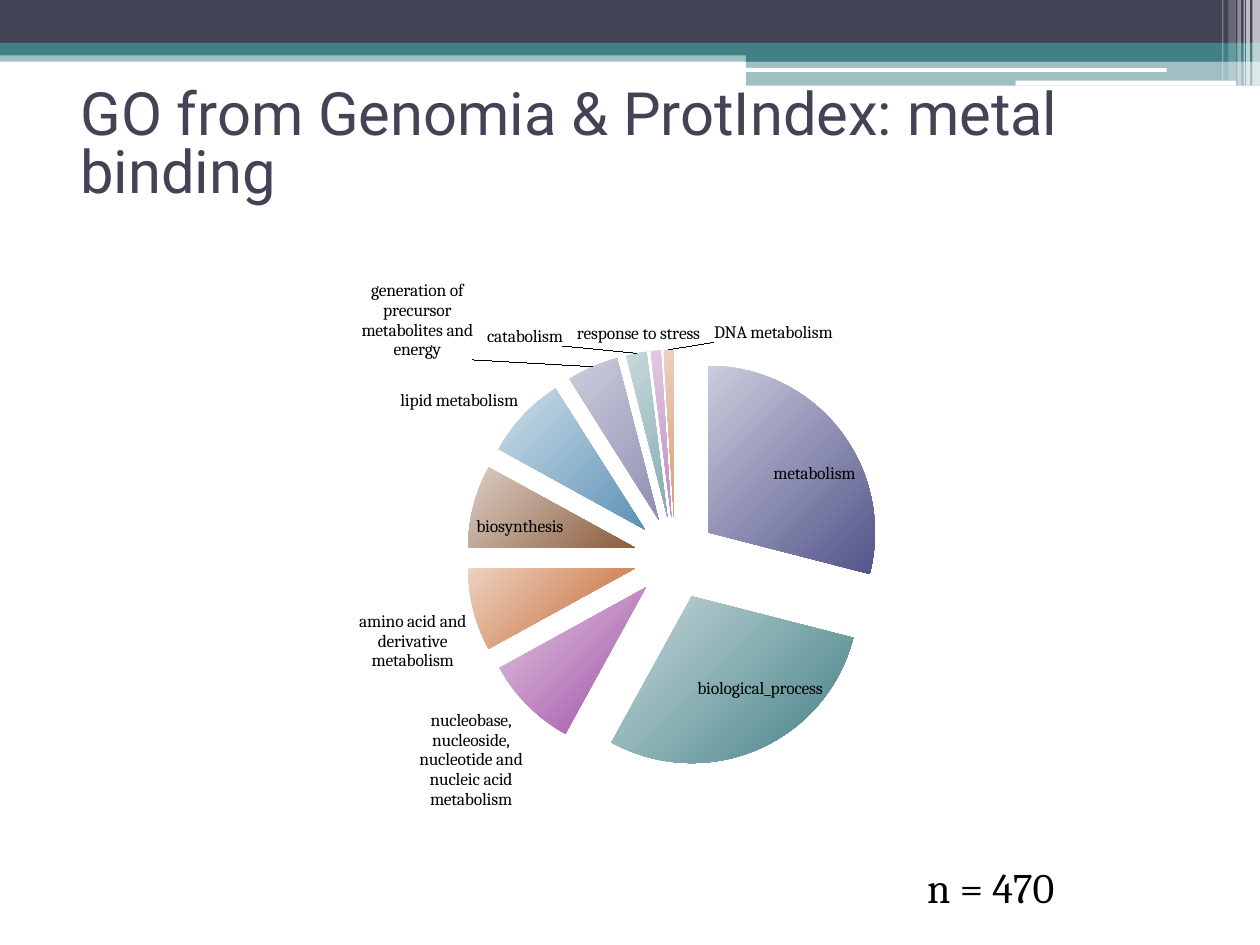
from lxml.etree import SubElement
from pptx import Presentation
from pptx.chart.data import CategoryChartData
from pptx.dml.color import RGBColor
from pptx.enum.chart import XL_CHART_TYPE as ChartType, XL_LABEL_POSITION as LabelPosition
from pptx.enum.shapes import MSO_SHAPE as Shape
from pptx.enum.text import MSO_ANCHOR as Anchor, MSO_AUTO_SIZE as AutoSize
from pptx.oxml import parse_xml
from pptx.oxml.ns import nsdecls, qn
from pptx.util import Inches, Pt

WIDTH, HEIGHT = Inches(10), Inches(7.5)
COLUMNS, ROWS = 1000, 750
SLATE, TEAL, WHITE, BLACK = "424456", "438086", "FFFFFF", "000000"
SLICE_COLOURS = ["53548A", "438086", "A04DA3", "C4652D", "8B5D3D", "5C92B5"]
BANDS = [
    (0, 40, 1000, 9, TEAL, 50),
    (0, 0, 1000, 34, SLATE, 100),
    (0, 34, 1000, 10, TEAL, 100),
    (592, 39, 408, 10, TEAL, 100),
    (592, 48, 408, 20, TEAL, 50),
]
SLOTS = [(591, 54, 335, 3), (806, 64, 175, 4)]
STRIPES = [
    (994, 6, 68, 65),
    (989, 3, 68, 65),
    (987, 1, 68, 60),
    (982, 3, 68, 40),
    (975, 6, 64, 20),
    (970, 1, 64, 30),
]
SLICES = {
    "metabolism": 29,
    "biological_process": 29,
    "nucleobase, nucleoside, nucleotide and nucleic acid metabolism": 9,
    "amino acid and derivative metabolism": 8,
    "biosynthesis": 8,
    "lipid metabolism": 8,
    "generation of precursor metabolites and energy": 5,
    "catabolism": 2,
    "response to stress": 1,
    "DNA metabolism": 1,
}


def colour(code):
    return RGBColor.from_string(code)


def lighten(code, share):
    channels = [int(code[i:i + 2], 16) for i in (0, 2, 4)]
    return "".join(f"{round(c + (255 - c) * share):02X}" for c in channels)


def place(column, row, columns, rows):
    return (WIDTH * column // COLUMNS, HEIGHT * row // ROWS,
            WIDTH * columns // COLUMNS, HEIGHT * rows // ROWS)


def add_band(page, area, code, opacity=100, kind=Shape.RECTANGLE):
    band = page.shapes.add_shape(kind, *place(*area))
    band.shadow.inherit = False
    band.line.fill.background()
    band.fill.solid()
    band.fill.fore_color.rgb = colour(code)
    if opacity < 100:
        tint = band.fill._xPr.find(qn("a:solidFill"))[0]
        SubElement(tint, qn("a:alpha"), val=str(opacity * 1000))


def add_text(page, area, text, font, size, code, wrap=True):
    box = page.shapes.add_textbox(*place(*area))
    frame = box.text_frame
    frame.word_wrap = wrap
    frame.text = text
    para = frame.paragraphs[0]
    span = para.runs[0]
    span.font.name, span.font.size = font, Pt(size)
    span.font.color.rgb = colour(code)
    return frame


def shade_slice(point, index):
    cycle, hue = divmod(index, len(SLICE_COLOURS))
    base = SLICE_COLOURS[hue]
    fill = point.format.fill
    fill.gradient()
    fill.gradient_angle = 315
    for stop, share in zip(fill.gradient_stops, (0.7, 0.35 * cycle)):
        stop.color.rgb = colour(lighten(base, share))
    point.format.line.fill.background()


def add_pie(page, area):
    data = CategoryChartData()
    data.categories = list(SLICES)
    data.add_series("Series 1", list(SLICES.values()))
    chart = page.shapes.add_chart(ChartType.PIE, *place(*area), data).chart
    chart.has_title = chart.has_legend = False
    chart.font.name, chart.font.size = "Cambria", Pt(10)
    chart.font.color.rgb = colour(BLACK)

    plot = chart.plots[0]
    plot.vary_by_categories = True
    plot.has_data_labels = True
    labels = plot.data_labels
    labels.show_category_name = True
    labels.show_value = labels.show_percentage = False
    labels.number_format, labels.number_format_is_linked = "0.00%", False
    labels.position = LabelPosition.BEST_FIT

    series = plot.series[0]
    for index in range(len(SLICES)):
        shade_slice(series.points[index], index)
    explosion = parse_xml(f'<c:explosion {nsdecls("c")} val="25"/>')
    series._element.find(qn("c:tx")).addnext(explosion)
    set_plot_area(chart, x=0.27, y=0.15, w=0.59, h=0.7)


def set_plot_area(chart, **shares):
    plot_area = chart._chartSpace.chart.plotArea
    for old in plot_area.findall(qn("c:layout")):
        plot_area.remove(old)
    sides = "".join(f'<c:{side} val="{share}"/>' for side, share in shares.items())
    plot_area.insert(0, parse_xml(
        f'<c:layout {nsdecls("c")}><c:manualLayout><c:layoutTarget val="inner"/>'
        f'<c:xMode val="edge"/><c:yMode val="edge"/>{sides}</c:manualLayout></c:layout>'))


def main():
    deck = Presentation()
    deck.slide_width, deck.slide_height = WIDTH, HEIGHT
    page = deck.slides.add_slide(deck.slide_layouts[6])

    for *area, code, opacity in BANDS:
        add_band(page, area, code, opacity)
    for area in SLOTS:
        add_band(page, area, WHITE, kind=Shape.ROUNDED_RECTANGLE)
    for column, columns, rows, opacity in STRIPES:
        add_band(page, (column, 0, columns, rows), WHITE, opacity)

    title = add_text(page, (54, 63, 892, 108), "GO from Genomia & ProtIndex: metal binding",
                     "Roboto", 34.1, SLATE)
    title.vertical_anchor = Anchor.MIDDLE
    title.paragraphs[0].line_spacing = 0.8

    add_pie(page, (219, 206, 561, 474))
    count = add_text(page, (726, 679, 132, 50), "n = 470", "Cambria", 24, BLACK, wrap=False)
    count.auto_size = AutoSize.SHAPE_TO_FIT_TEXT
    deck.save("out.pptx")


if __name__ == "__main__":
    main()
